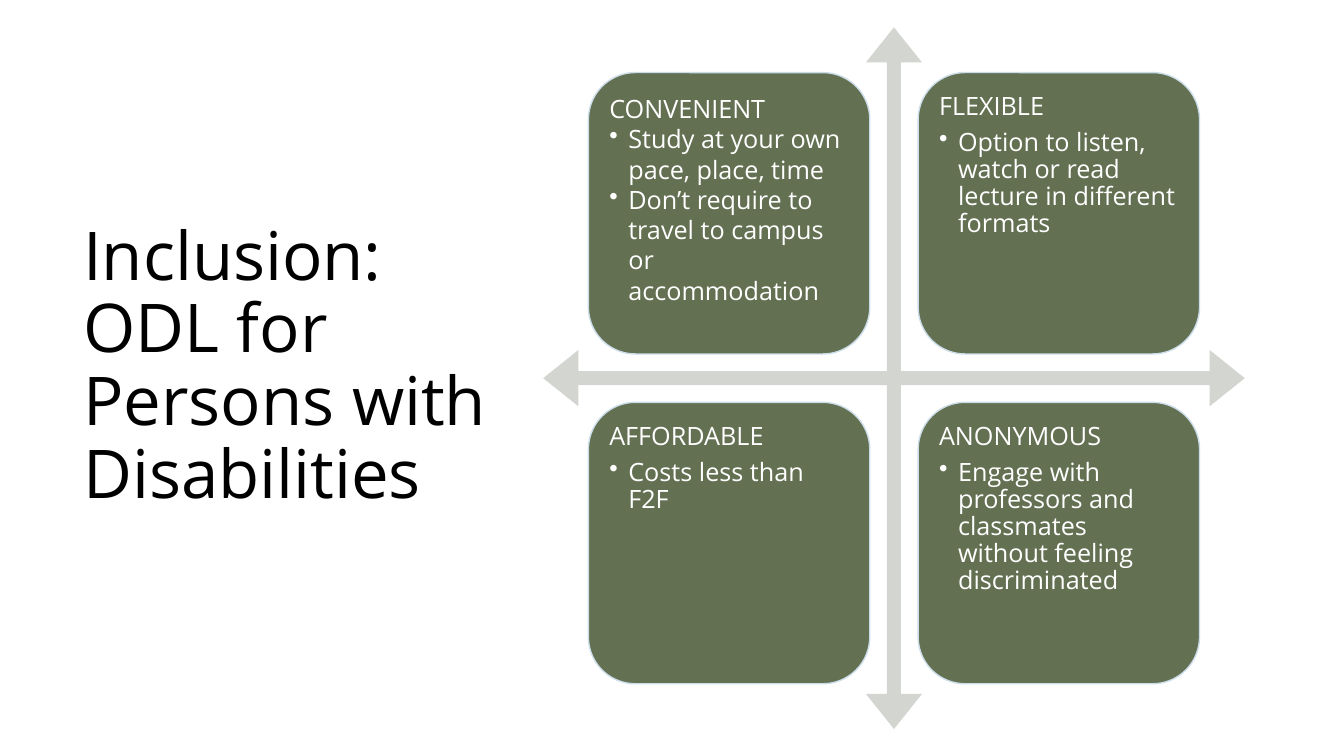
from dataclasses import dataclass

from lxml.etree import SubElement
from pptx import Presentation
from pptx.dml.color import RGBColor
from pptx.enum.shapes import MSO_SHAPE as Shape
from pptx.enum.text import MSO_ANCHOR as Anchor, PP_ALIGN as Align
from pptx.oxml.ns import qn
from pptx.slide import Slide
from pptx.util import Cm, Pt

COLORS = {
    "title": "000000",
    "axes": "D3D5D1",
    "card": "637052",
    "card_edge": "CCDDEA",
    "card_text": "FFFFFF",
}
FONT = "Open Sans"
CARD_LEFT, CARD_TOP, CARD_SIZE, CARD_PITCH = 14.83, 1.83, 7.09, 8.31
CARD_INSET = Cm(0.18)
BULLET_INDENT = Cm(0.48)


@dataclass(frozen=True)
class Benefit:
    heading: str
    points: tuple[str, ...]
    line_spacing: float = 0.9
    heading_gap: float = 6.3


BENEFITS = (
    Benefit(
        "CONVENIENT",
        ("Study at your own pace, place, time",
         "Don’t require to travel to campus or accommodation"),
        line_spacing=1.0,
        heading_gap=0,
    ),
    Benefit("FLEXIBLE", ("Option to listen, watch or read lecture in different formats",)),
    Benefit("AFFORDABLE", ("Costs less than F2F",)),
    Benefit("ANONYMOUS", ("Engage with professors and classmates without feeling discriminated",)),
)


def color(name: str) -> RGBColor:
    return RGBColor.from_string(COLORS[name])


def style_text(paragraph, size: float, color_name: str, line_spacing: float) -> None:
    paragraph.alignment = Align.LEFT
    paragraph.line_spacing = line_spacing
    paragraph.font.name = FONT
    paragraph.font.size = Pt(size)
    paragraph.font.color.rgb = color(color_name)


def add_bullet(paragraph) -> None:
    properties = paragraph._p.get_or_add_pPr()
    properties.set("marL", str(BULLET_INDENT))
    properties.set("indent", str(-BULLET_INDENT))
    SubElement(properties, qn("a:buChar"), char="•")


def add_title(slide: Slide) -> None:
    title = slide.shapes.add_textbox(Cm(1.85), Cm(5.26), Cm(11.53), Cm(8)).text_frame
    title.word_wrap = True
    title.vertical_anchor = Anchor.MIDDLE
    title.text = "Inclusion: ODL for Persons with Disabilities"
    style_text(title.paragraphs[0], 48, "title", 0.9)


def add_axes(slide: Slide) -> None:
    axes = slide.shapes.add_shape(
        Shape.QUAD_ARROW, Cm(13.69), Cm(0.69), Cm(17.68), Cm(17.68))
    for index, value in enumerate((0.02, 0.04, 0.05)):
        axes.adjustments[index] = value
    axes.shadow.inherit = False
    axes.fill.solid()
    axes.fill.fore_color.rgb = color("axes")
    axes.line.fill.background()


def add_card(slide: Slide, benefit: Benefit, row: int, column: int) -> None:
    card = slide.shapes.add_shape(
        Shape.ROUNDED_RECTANGLE,
        Cm(CARD_LEFT + column * CARD_PITCH), Cm(CARD_TOP + row * CARD_PITCH),
        Cm(CARD_SIZE), Cm(CARD_SIZE))
    card.shadow.inherit = False
    card.fill.solid()
    card.fill.fore_color.rgb = color("card")
    card.line.color.rgb = color("card_edge")
    card.line.width = Pt(1)

    content = card.text_frame
    content.word_wrap = True
    content.vertical_anchor = Anchor.TOP
    content.margin_left = content.margin_right = CARD_INSET
    content.margin_top = content.margin_bottom = CARD_INSET
    content.text = "\n".join((benefit.heading, *benefit.points))
    heading, *points = content.paragraphs
    heading.space_after = Pt(benefit.heading_gap)
    for point in points:
        point.level = 1
        add_bullet(point)
    for paragraph in content.paragraphs:
        style_text(paragraph, 18, "card_text", benefit.line_spacing)


def main() -> None:
    deck = Presentation()
    deck.slide_width, deck.slide_height = Cm(33.87), Cm(19.05)
    slide = deck.slides.add_slide(deck.slide_layouts[6])
    add_title(slide)
    add_axes(slide)
    for index, benefit in enumerate(BENEFITS):
        add_card(slide, benefit, *divmod(index, 2))
    deck.save("out.pptx")


if __name__ == "__main__":
    main()
